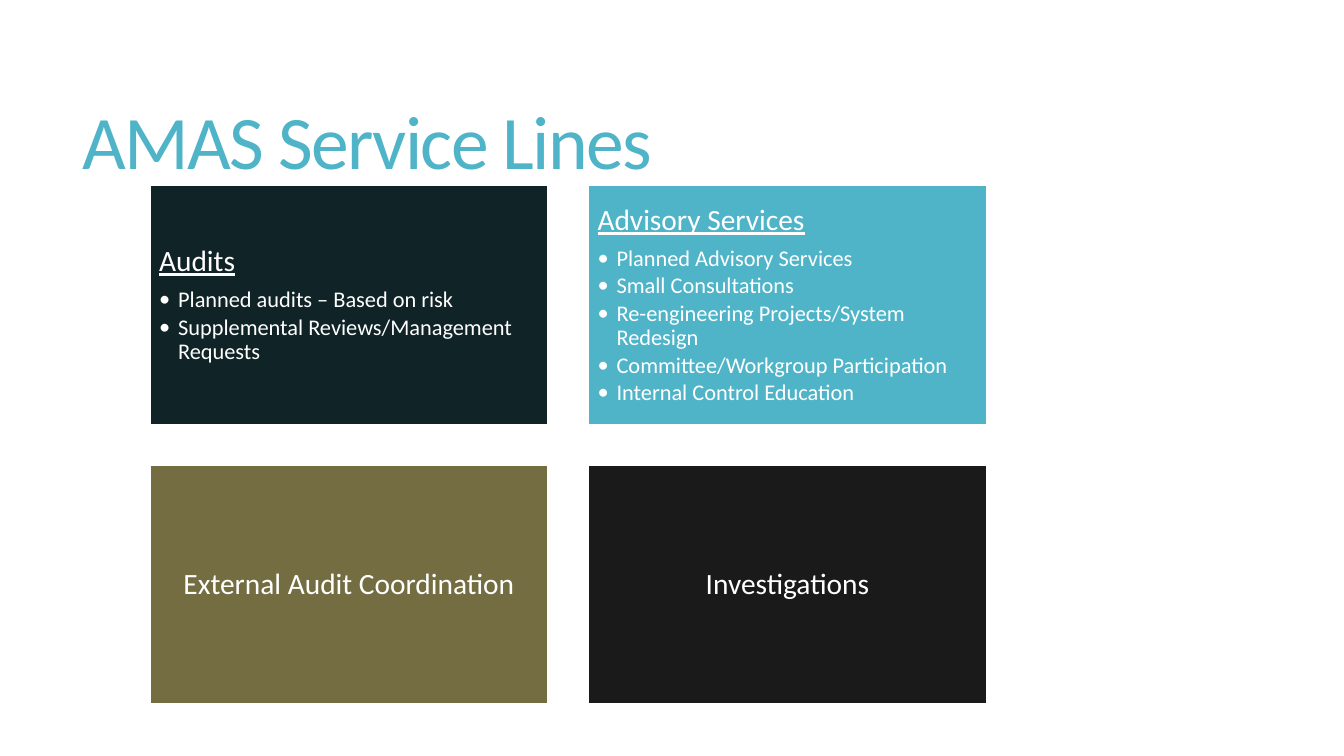
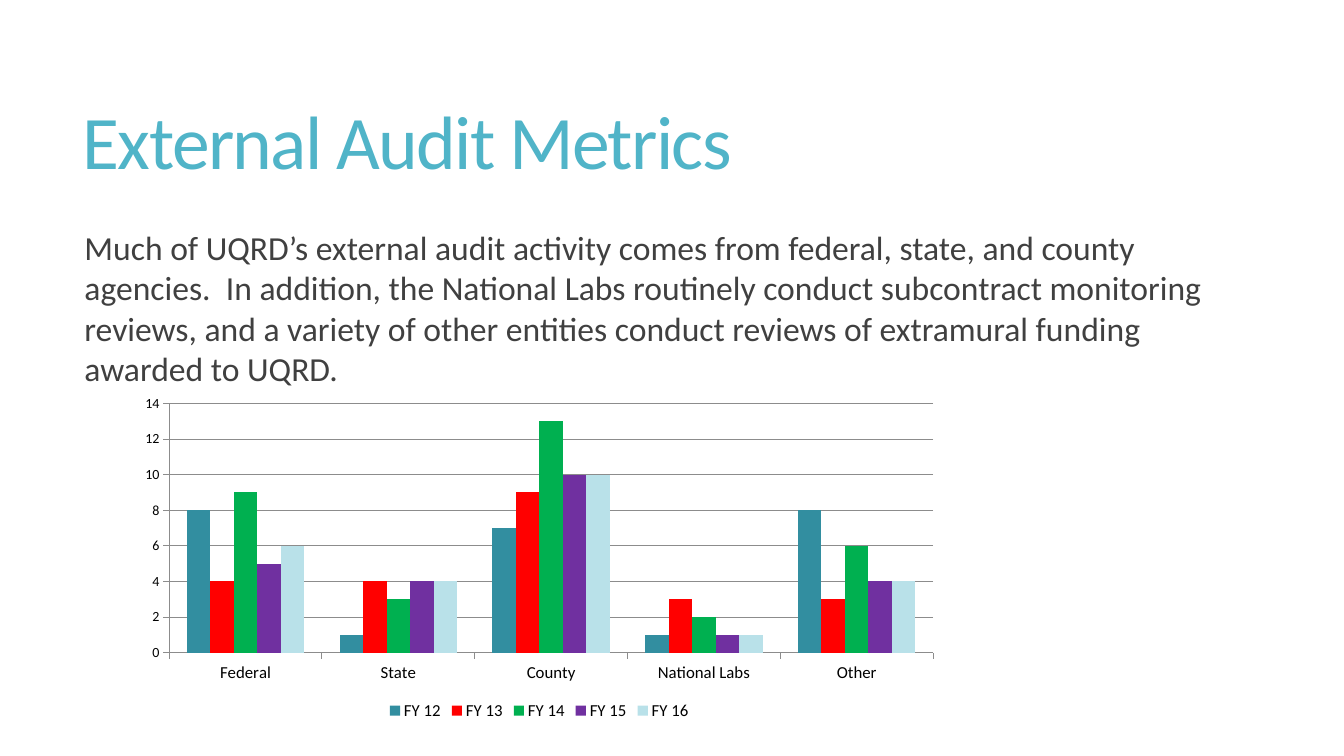
"""Build two slides on audit service lines and external audit metrics."""
from dataclasses import dataclass

from lxml import etree
from pptx import Presentation
from pptx import util as u
from pptx.chart.data import CategoryChartData
from pptx.dml.color import RGBColor
from pptx.enum import chart as chart_enum
from pptx.enum import shapes, text
from pptx.oxml.ns import qn


@dataclass(frozen=True)
class Theme:
    """Colours, font and type sizes shared by the slides."""
    font: str = "Calibri"
    accent: str = "50B4C8"
    body: str = "404040"
    white: str = "FFFFFF"
    black: str = "000000"
    rule: str = "8C8C8C"
    cards: tuple = ("102326", "50B4C8", "746D41", "1A1A1A")
    series: tuple = ("328EA0", "FF0000", "00B050", "7030A0", "B9E1E9")
    title_size: int = 54
    body_size: int = 24
    heading_size: int = 21
    bullet_size: int = 16
    label_size: int = 12
    value_size: int = 10


THEME = Theme()

CARDS = [
    ("Audits", ["Planned audits – Based on risk",
                "Supplemental Reviews/Management Requests"]),
    ("Advisory Services", ["Planned Advisory Services",
                           "Small Consultations",
                           "Re-engineering Projects/System Redesign",
                           "Committee/Workgroup Participation",
                           "Internal Control Education"]),
    ("External Audit Coordination", []),
    ("Investigations", []),
]

INTRODUCTION = (
    "Much of UQRD’s external audit activity comes from federal, state, and county "
    "agencies.  In addition, the National Labs routinely conduct subcontract "
    "monitoring reviews, and a variety of other entities conduct reviews of "
    "extramural funding awarded to UQRD.")

AGENCIES = ["Federal", "State", "County", "National Labs", "Other"]
AUDITS_BY_YEAR = {
    "FY 12": [8, 1, 7, 1, 8],
    "FY 13": [4, 4, 9, 3, 3],
    "FY 14": [9, 3, 13, 2, 6],
    "FY 15": [5, 4, 10, 1, 4],
    "FY 16": [6, 4, 10, 1, 4],
}


def rgb(color):
    """Return a colour object for a hex string."""
    return RGBColor.from_string(color)


def format_font(font, size, color):
    """Apply the theme font in a size and colour."""
    font.name = THEME.font
    font.size = u.Pt(size)
    font.color.rgb = rgb(color)


def write_text(paragraph, content, *, size, color, underline=None, tracking=None,
               align=text.PP_ALIGN.LEFT, line_spacing=1.0, before=0, after=0,
               bullet=False):
    """Write one formatted run into a paragraph."""
    paragraph.alignment = align
    paragraph.line_spacing = line_spacing
    paragraph.space_before = u.Pt(before)
    paragraph.space_after = u.Pt(after)
    run = paragraph.add_run()
    run.text = content
    format_font(run.font, size, color)
    run.font.underline = underline
    if tracking is not None:
        run._r.get_or_add_rPr().set("spc", str(round(tracking * 100)))
    if bullet:
        properties = paragraph._p.get_or_add_pPr()
        indent = u.Cm(0.48)
        properties.set("marL", str(indent))
        properties.set("indent", str(-indent))
        etree.SubElement(properties, qn("a:buFont")).set("typeface", THEME.font)
        etree.SubElement(properties, qn("a:buChar")).set("char", "•")


def add_titled_slide(presentation, title):
    """Add a title-only slide with the shared title style."""
    slide = presentation.slides.add_slide(presentation.slide_layouts[5])
    shape = slide.shapes.title
    shape.left, shape.top = u.Cm(1.83), u.Cm(1.4)
    shape.width, shape.height = u.Cm(29.92), u.Cm(4.6)
    frame = shape.text_frame
    frame.auto_size = text.MSO_AUTO_SIZE.NONE
    frame.vertical_anchor = text.MSO_ANCHOR.MIDDLE
    write_text(frame.paragraphs[0], title, size=THEME.title_size,
               color=THEME.accent, tracking=-1.2, line_spacing=0.85)
    return slide


def add_card(slide, left, top, width, height, fill, heading, bullets):
    """Add a filled card with a heading and optional bullets."""
    card = slide.shapes.add_shape(shapes.MSO_SHAPE.RECTANGLE, left, top, width, height)
    card.shadow.inherit = False
    card.fill.solid()
    card.fill.fore_color.rgb = rgb(fill)
    card.line.color.rgb = rgb(THEME.white)
    card.line.width = u.Pt(1)
    frame = card.text_frame
    frame.word_wrap = True
    frame.vertical_anchor = text.MSO_ANCHOR.MIDDLE
    frame.margin_left = frame.margin_right = u.Cm(0.23)
    frame.margin_top = frame.margin_bottom = u.Cm(0.23)
    align = text.PP_ALIGN.LEFT if bullets else text.PP_ALIGN.CENTER
    write_text(frame.paragraphs[0], heading, size=THEME.heading_size,
               color=THEME.white, underline=bool(bullets), align=align,
               line_spacing=0.9, after=7.35)
    for item in bullets:
        write_text(frame.add_paragraph(), item, size=THEME.bullet_size,
                   color=THEME.white, line_spacing=0.9, after=2.4, bullet=True)


def add_card_grid(slide, cards, columns=2):
    """Lay the cards out in a grid with equal gaps."""
    width, height, gap = u.Cm(10.03), u.Cm(6.02), u.Cm(1.02)
    for index, ((heading, bullets), fill) in enumerate(zip(cards, THEME.cards)):
        row, column = divmod(index, columns)
        add_card(slide, u.Cm(3.78) + column * (width + gap),
                 u.Cm(4.68) + row * (height + gap),
                 width, height, fill, heading, bullets)


def add_body(slide, content):
    """Add the body paragraph below the title."""
    box = slide.shapes.add_textbox(u.Cm(1.88), u.Cm(5.59), u.Cm(29.87), u.Cm(4.2))
    box.text_frame.word_wrap = True
    write_text(box.text_frame.paragraphs[0], content, size=THEME.body_size,
               color=THEME.body, before=3)


def format_line(line):
    """Give a chart line the shared rule style."""
    line.color.rgb = rgb(THEME.rule)
    line.width = u.Pt(0.75)


def format_axis(axis, size):
    """Format an axis line, its ticks and its labels."""
    axis.major_tick_mark = chart_enum.XL_TICK_MARK.OUTSIDE
    axis.minor_tick_mark = chart_enum.XL_TICK_MARK.NONE
    format_line(axis.format.line)
    format_font(axis.tick_labels.font, size, THEME.black)


def add_column_chart(slide, categories, values_by_series):
    """Add a clustered column chart with a legend below."""
    data = CategoryChartData(number_format="General")
    data.categories = categories
    for name, values in values_by_series.items():
        data.add_series(name, values)
    chart = slide.shapes.add_chart(
        chart_enum.XL_CHART_TYPE.COLUMN_CLUSTERED,
        u.Cm(3.25), u.Cm(9.8), u.Cm(20.68), u.Cm(8.46), data).chart
    chart.has_title = False
    format_font(chart.font, THEME.value_size, THEME.black)
    format_axis(chart.category_axis, THEME.label_size)
    format_axis(chart.value_axis, THEME.value_size)
    chart.value_axis.minimum_scale = 0
    chart.value_axis.maximum_scale = 14
    chart.value_axis.major_unit = 2
    chart.value_axis.has_major_gridlines = True
    format_line(chart.value_axis.major_gridlines.format.line)
    chart.has_legend = True
    chart.legend.position = chart_enum.XL_LEGEND_POSITION.BOTTOM
    chart.legend.include_in_layout = False
    format_font(chart.legend.font, THEME.label_size, THEME.black)
    plot = chart.plots[0]
    plot.vary_by_categories = False
    plot.gap_width = 150
    for series, color in zip(plot.series, THEME.series):
        series.format.fill.solid()
        series.format.fill.fore_color.rgb = rgb(color)


def main():
    """Build and save the presentation."""
    presentation = Presentation()
    presentation.slide_width = u.Cm(33.87)
    presentation.slide_height = u.Cm(19.05)

    service_lines = add_titled_slide(presentation, "AMAS Service Lines")
    add_card_grid(service_lines, CARDS)

    metrics = add_titled_slide(presentation, "External Audit Metrics")
    add_body(metrics, INTRODUCTION)
    add_column_chart(metrics, AGENCIES, AUDITS_BY_YEAR)

    presentation.save("out.pptx")


if __name__ == "__main__":
    main()
